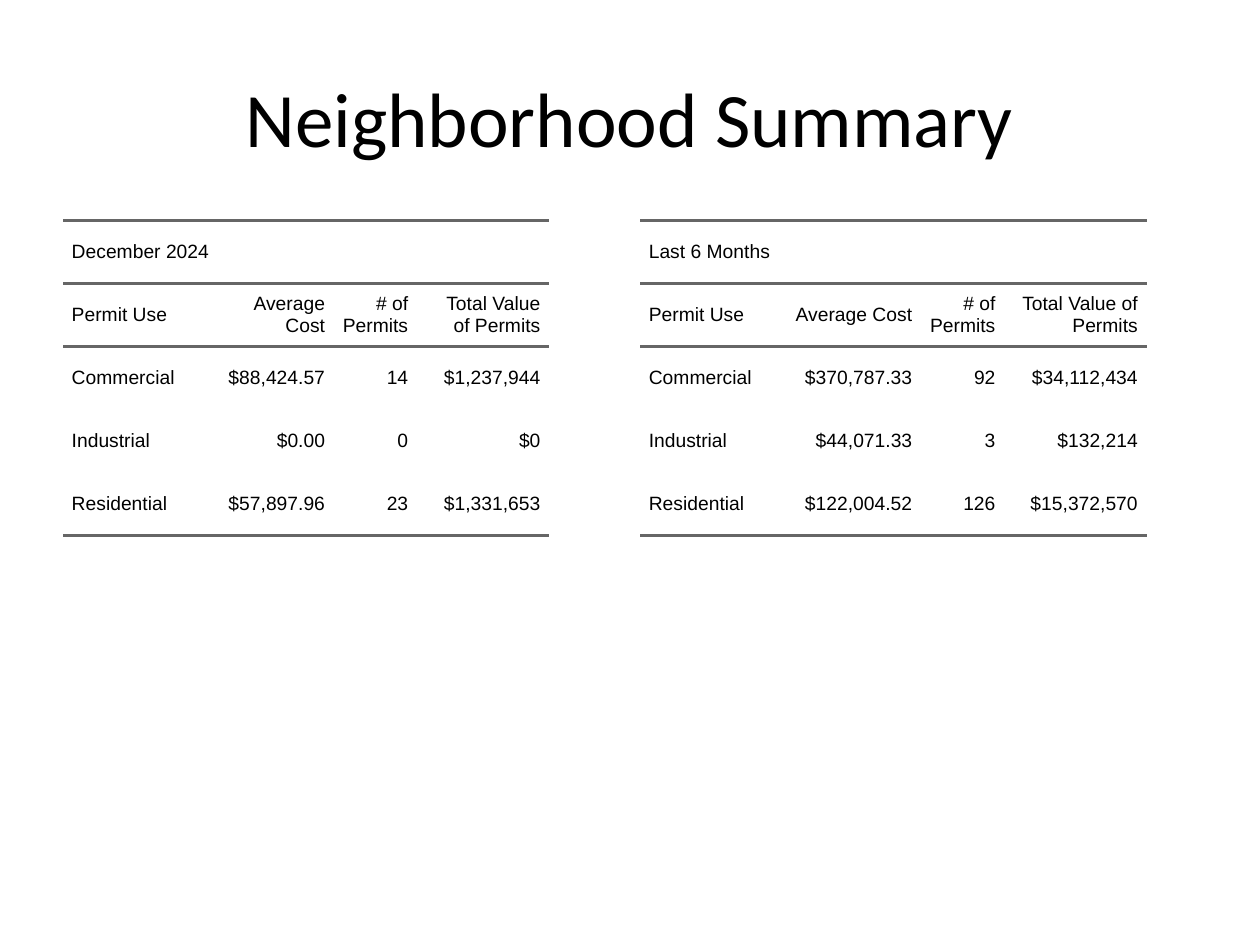
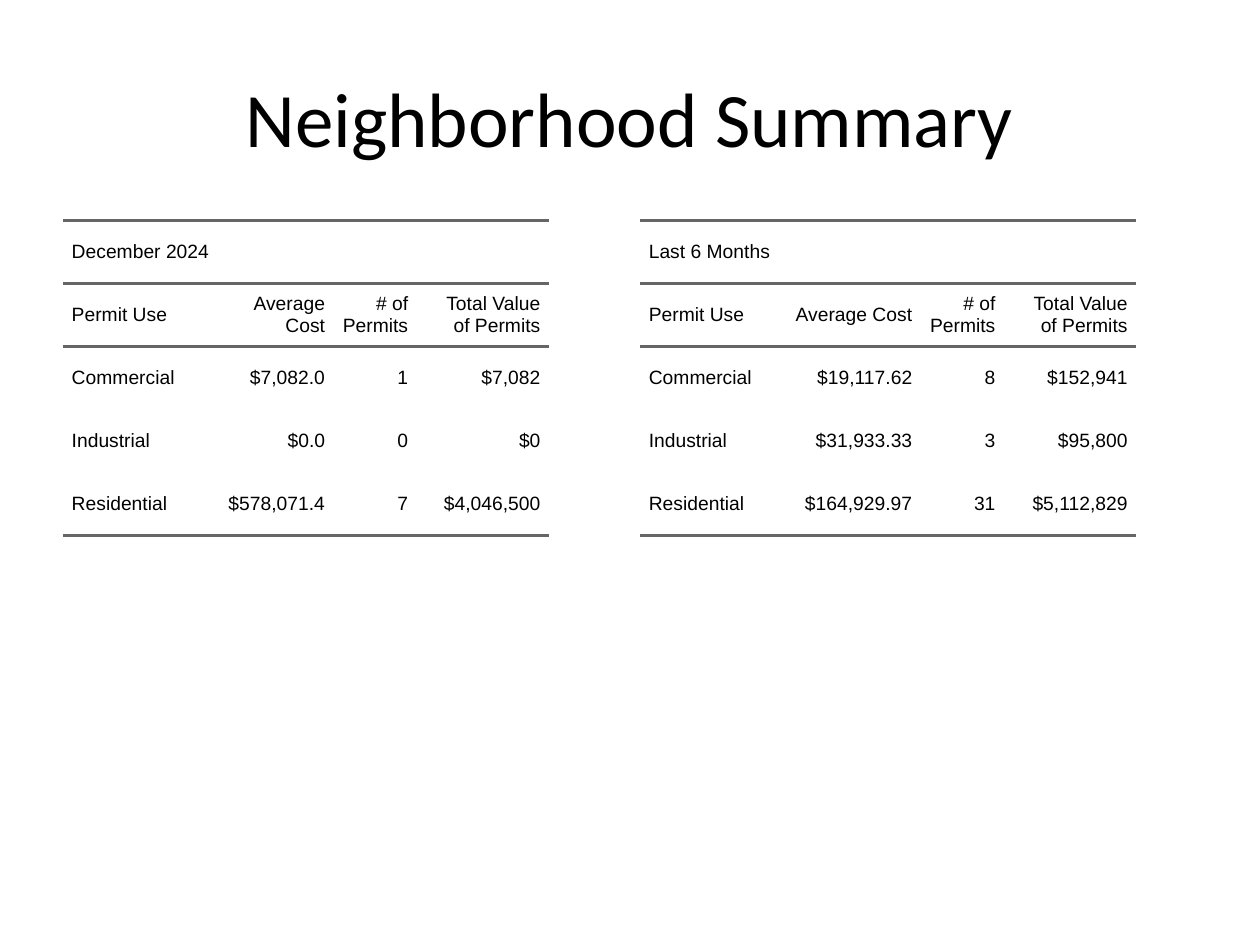
from dataclasses import dataclass

from pptx import Presentation
from pptx.dml.color import RGBColor
from pptx.enum import text
from pptx.oxml.ns import qn
from pptx.util import Pt
from lxml import etree

# Shared look
BLACK, RULE = "000000", "666666"
TITLE = "Neighborhood Summary"
HEADINGS = ("Permit Use", "Average Cost", "# of Permits", "Total Value of Permits")
USES = ("Commercial", "Industrial", "Residential")
LEFT, RIGHT, TABLE_TOP = 36, 365.76, 126
FRAME_WIDTH, FRAME_HEIGHT = 318.24, 356.4
ROW_HEIGHT, PADDING = 36, 5
USE_WIDTH, COUNT_WIDTH, NARROW, WIDE = 79.2, 47.5, 75.6, 81.4
RULED_EDGES = {0, 1, 2, 5}  # horizontal edges, counted from the table's top


@dataclass(frozen=True)
class PermitTable:
    period: str
    left: float
    cost_width: float
    total_width: float
    figures: tuple  # average cost, number of permits and total value for each use


def december(*figures: tuple) -> PermitTable:
    return PermitTable("December 2024", LEFT, NARROW, NARROW, figures)


def half_year(total_width: float, *figures: tuple) -> PermitTable:
    return PermitTable("Last 6 Months", RIGHT, WIDE, total_width, figures)


PAGES = (
    (
        december(("$88,424.57", "14", "$1,237,944"),
                 ("$0.00", "0", "$0"),
                 ("$57,897.96", "23", "$1,331,653")),
        half_year(WIDE,
                  ("$370,787.33", "92", "$34,112,434"),
                  ("$44,071.33", "3", "$132,214"),
                  ("$122,004.52", "126", "$15,372,570")),
    ),
    (
        december(("$7,082.0", "1", "$7,082"),
                 ("$0.0", "0", "$0"),
                 ("$578,071.4", "7", "$4,046,500")),
        half_year(NARROW,
                  ("$19,117.62", "8", "$152,941"),
                  ("$31,933.33", "3", "$95,800"),
                  ("$164,929.97", "31", "$5,112,829")),
    ),
)


def color(value: str) -> RGBColor:
    return RGBColor.from_string(value)


def set_font(paragraph, name: str, size: float) -> None:
    paragraph.font.name = name
    paragraph.font.size = Pt(size)
    paragraph.font.color.rgb = color(BLACK)


def set_borders(cell, row: int) -> None:
    """Rule the cell's top and bottom where the table has a line."""
    properties = cell._tc.get_or_add_tcPr()
    ruled = {"a:lnT": row in RULED_EDGES, "a:lnB": row + 1 in RULED_EDGES}
    for tag in ("a:lnL", "a:lnR", "a:lnT", "a:lnB"):
        line = etree.SubElement(properties, qn(tag))
        if ruled.get(tag):
            line.set("w", str(Pt(1.5)))
            fill = etree.SubElement(line, qn("a:solidFill"))
            etree.SubElement(fill, qn("a:srgbClr")).set("val", RULE)
        else:
            etree.SubElement(line, qn("a:noFill"))


def format_cell(cell, row: int, column: int) -> None:
    set_borders(cell, row)
    cell.fill.background()
    cell.margin_left = cell.margin_right = Pt(0)
    cell.margin_top = cell.margin_bottom = Pt(0)
    cell.margin_right = Pt(PADDING)
    cell.margin_bottom = Pt(0)
    cell.vertical_anchor = text.MSO_ANCHOR.MIDDLE
    paragraph = cell.text_frame.paragraphs[0]
    paragraph.space_before = paragraph.space_after = Pt(5)
    paragraph.alignment = text.PP_ALIGN.RIGHT if column else text.PP_ALIGN.LEFT
    paragraph._p.get_or_add_pPr().set("marL", str(Pt(PADDING)))
    set_font(paragraph, "Arial", 11)


def draw_table(page, data: PermitTable) -> None:
    rows = [(data.period, "", "", ""), HEADINGS]
    rows += [(use, *figures) for use, figures in zip(USES, data.figures)]
    frame = page.shapes.add_table(
        len(rows), len(HEADINGS), Pt(data.left), Pt(TABLE_TOP),
        Pt(FRAME_WIDTH), Pt(FRAME_HEIGHT))
    table = frame.table
    table.first_row = table.horz_banding = False
    widths = (USE_WIDTH, data.cost_width, COUNT_WIDTH, data.total_width)
    for column, width in zip(table.columns, widths):
        column.width = Pt(width)
    for row, values in enumerate(rows):
        table.rows[row].height = Pt(ROW_HEIGHT)
        for column, value in enumerate(values):
            cell = table.cell(row, column)
            cell.text = value
            format_cell(cell, row, column)
    table.cell(0, 0).merge(table.cell(0, len(HEADINGS) - 1))
    # The frame keeps its own size, larger than the rows and columns
    frame.width, frame.height = Pt(FRAME_WIDTH), Pt(FRAME_HEIGHT)


def draw_title(page) -> None:
    title = page.shapes.title
    title.left, title.top, title.width, title.height = Pt(36), Pt(21.6), Pt(648), Pt(90)
    title.text_frame.text = TITLE
    title.text_frame.vertical_anchor = text.MSO_ANCHOR.MIDDLE
    paragraph = title.text_frame.paragraphs[0]
    paragraph.alignment = text.PP_ALIGN.CENTER
    set_font(paragraph, "Calibri", 44)


def main() -> None:
    deck = Presentation()
    deck.slide_width, deck.slide_height = Pt(720), Pt(540)
    for tables in PAGES:
        page = deck.slides.add_slide(deck.slide_layouts[5])
        draw_title(page)
        for data in tables:
            draw_table(page, data)
    deck.save("out.pptx")


if __name__ == "__main__":
    main()
